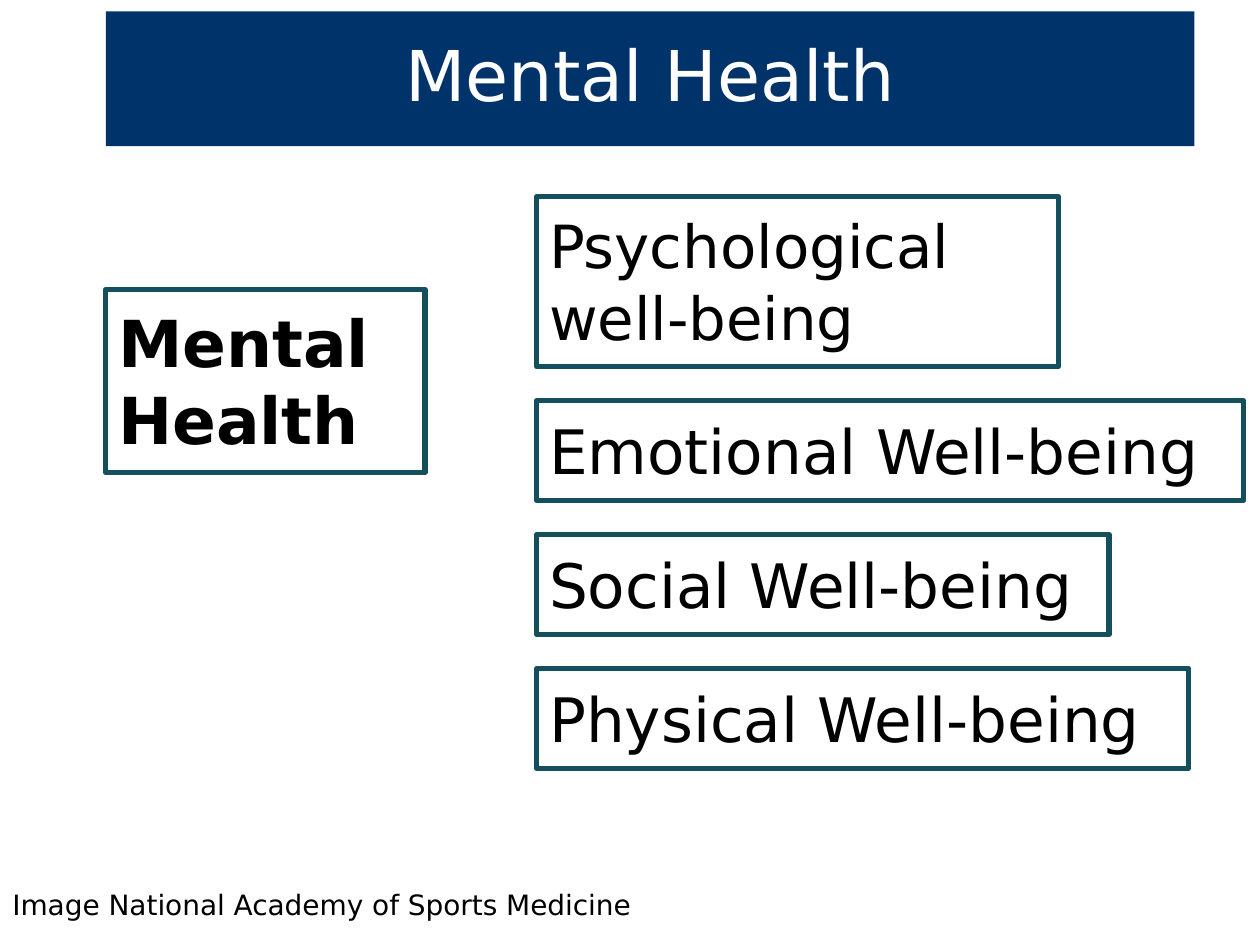
import pptx
import pptx.util
import pptx.dml.color
import pptx.enum.shapes
import pptx.enum.text

Pt = pptx.util.Pt
RGB = pptx.dml.color.RGBColor
NAVY = RGB(0x00, 0x33, 0x69)
TEAL = RGB(0x13, 0x4F, 0x5C)
BLACK = RGB(0, 0, 0)
WHITE = RGB(0xFF, 0xFF, 0xFF)
FONT = "DejaVu Sans"

# Content
TITLE = "Mental Health"
TOPIC = ["Mental", "Health"]
ASPECTS = [  # lines, width, height, text size
    (["Psychological", "well-being"], 298, 97.2, 34),
    (["Emotional Well-being"], 404, 57, 35),
    (["Social Well-being"], 327, 57, 35),
    (["Physical Well-being"], 372.5, 57, 35),
]
CREDIT = "Image National Academy of Sports Medicine"

# Layout
LEFT = 60.5
ASPECT_LEFT, ASPECT_TOP, GAP = 306.7, 112.3, 19.5


def write(sp, lines, size, color=BLACK, bold=False,
          align=pptx.enum.text.PP_ALIGN.LEFT, spacing=1.0):
    tf = sp.text_frame
    tf.text = "\n".join(lines)
    for p in tf.paragraphs:
        p.alignment, p.line_spacing = align, spacing
        font = p.runs[0].font
        for name, value in dict(name=FONT, size=Pt(size), bold=bold).items():
            setattr(font, name, value)
        font.color.rgb = color


def fit_frame(sp):
    frame = dict(word_wrap=True,
                 vertical_anchor=pptx.enum.text.MSO_ANCHOR.TOP,
                 auto_size=pptx.enum.text.MSO_AUTO_SIZE.SHAPE_TO_FIT_TEXT)
    frame.update({f"margin_{side}": Pt(7.2)
                  for side in ("left", "top", "right", "bottom")})
    for name, value in frame.items():
        setattr(sp.text_frame, name, value)


def add_box(s, lines, x, y, w, h, size, bold=False):
    sp = s.shapes.add_shape(pptx.enum.shapes.MSO_SHAPE.RECTANGLE,
                            Pt(x), Pt(y), Pt(w), Pt(h))
    sp.shadow.inherit = False
    sp.fill.background()
    sp.line.color.rgb = TEAL
    sp.line.width = Pt(3)
    write(sp, lines, size, bold=bold)
    fit_frame(sp)


prs = pptx.Presentation()
prs.slide_width, prs.slide_height = Pt(720), Pt(540)
s = prs.slides.add_slide(prs.slide_layouts[5])

# Title band
title = s.shapes.title
band = dict(left=LEFT, top=6.5, width=622, height=77)
for name, value in band.items():
    setattr(title, name, Pt(value))
title.fill.solid()
title.fill.fore_color.rgb = NAVY
title.text_frame.vertical_anchor = pptx.enum.text.MSO_ANCHOR.MIDDLE
write(title, [TITLE], 40, WHITE,
      align=pptx.enum.text.PP_ALIGN.CENTER, spacing=0.9)

# Topic box
add_box(s, TOPIC, LEFT, 165.6, 182.5, 104.4, 37, bold=True)

# Stack of aspects
y = ASPECT_TOP
for lines, w, h, size in ASPECTS:
    add_box(s, lines, ASPECT_LEFT, y, w, h, size)
    y += h + GAP

# Credit line
credit = s.shapes.add_textbox(Pt(0), Pt(500), Pt(432), Pt(33.8))
write(credit, [CREDIT], 16)
fit_frame(credit)

prs.save("out.pptx")
